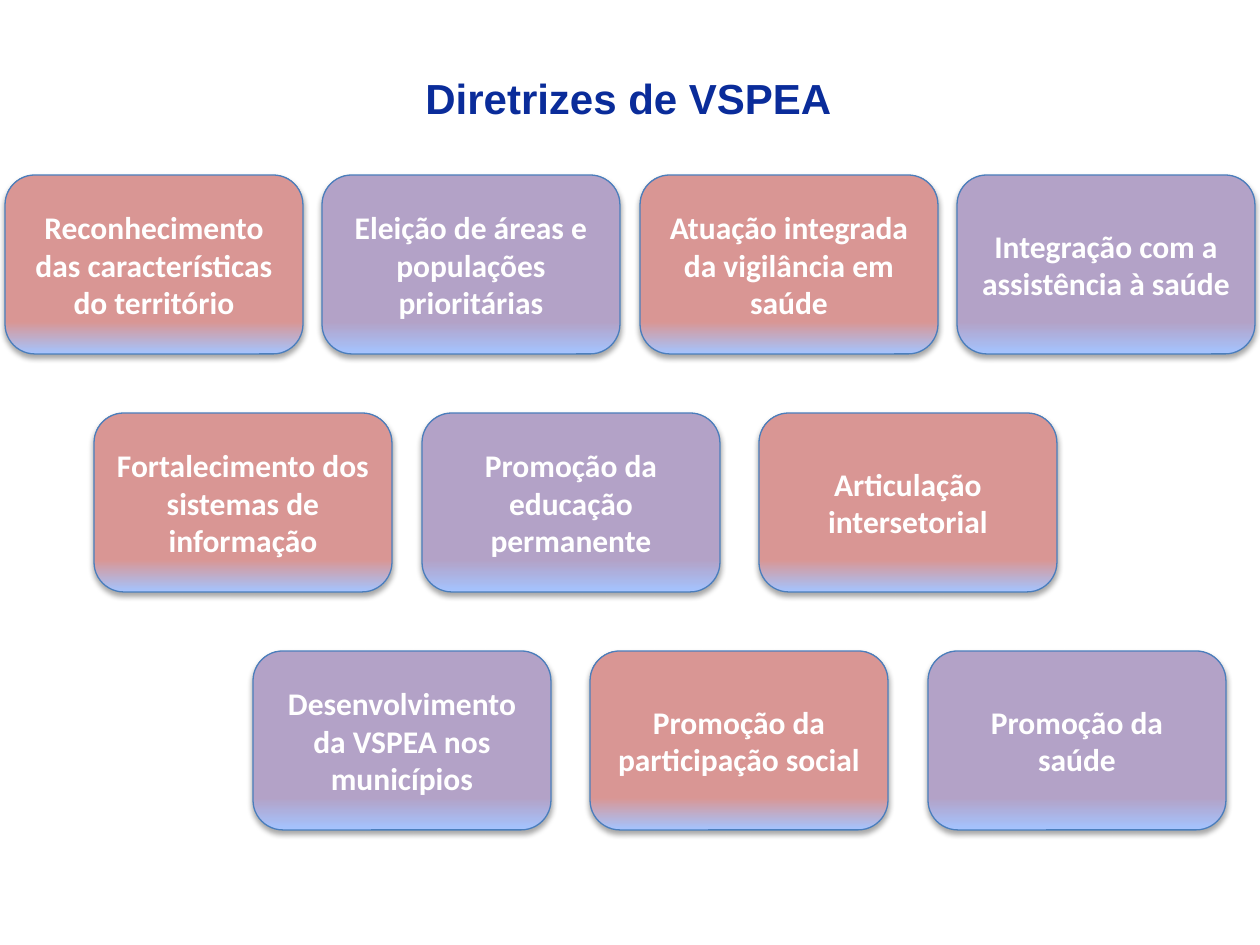
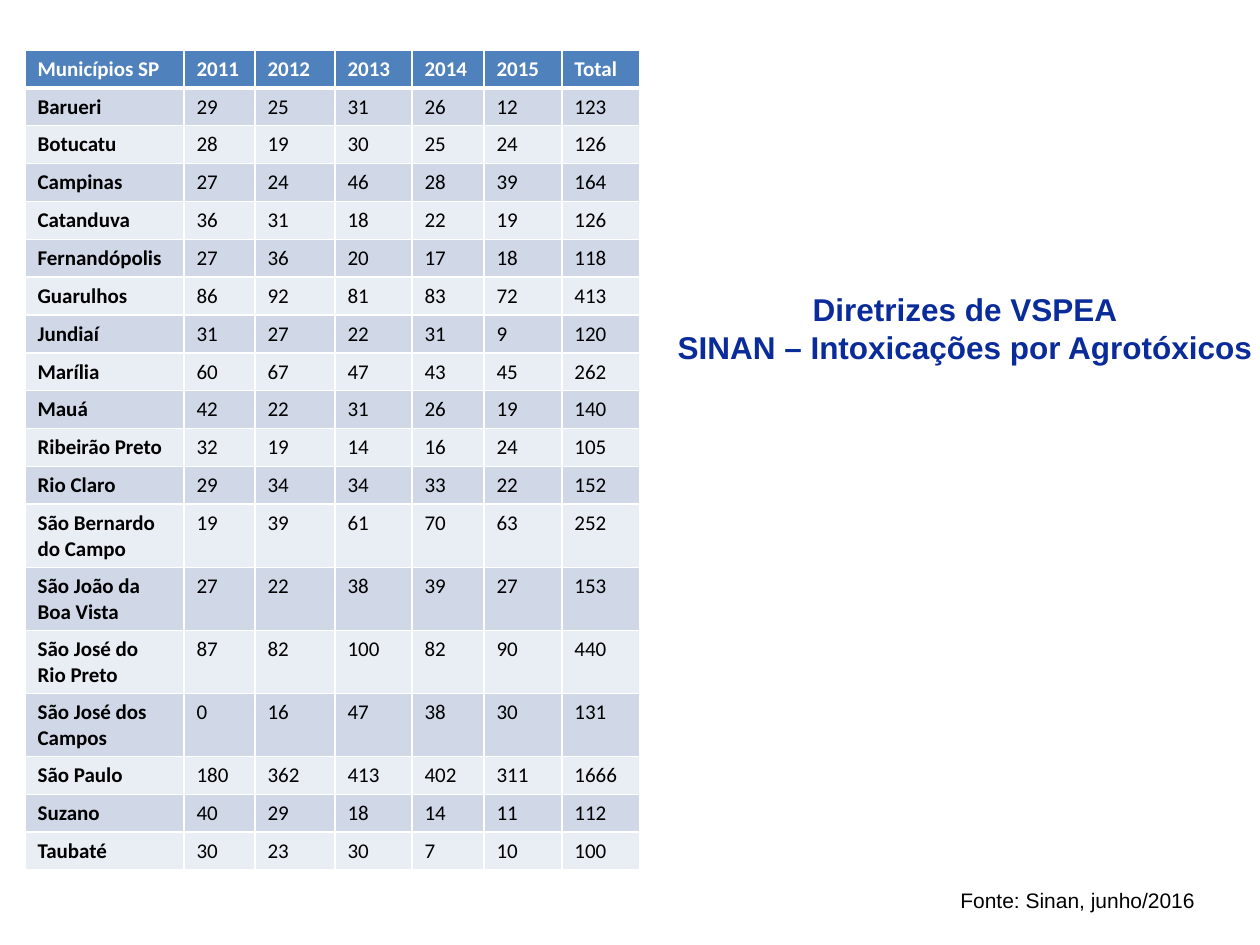
from dataclasses import dataclass

from lxml import etree
from pptx import Presentation
from pptx.dml.color import RGBColor
from pptx.enum.shapes import MSO_SHAPE as SHAPE
from pptx.enum.text import MSO_ANCHOR as ANCHOR, PP_ALIGN as ALIGN
from pptx.oxml.ns import qn
from pptx.util import Pt

# ---- Content ----
TITLE = "Diretrizes de VSPEA"
SUBTITLE = "SINAN – Intoxicações por Agrotóxicos"
SOURCE = "Fonte: Sinan, junho/2016"

# Each row of guidelines: (left edge, text) per card
GUIDELINE_ROWS = [
    [(5, "Reconhecimento das características do território"),
     (322, "Eleição de áreas e populações prioritárias"),
     (640, "Atuação integrada da vigilância em saúde"),
     (957, "Integração com a assistência à saúde")],
    [(94, "Fortalecimento dos sistemas de informação"),
     (422, "Promoção da educação permanente"),
     (759, "Articulação intersetorial")],
    [(253, "Desenvolvimento da VSPEA nos municípios"),
     (590, "Promoção da participação social"),
     (928, "Promoção da saúde")],
]

CASES = [
    ("Municípios SP", 2011, 2012, 2013, 2014, 2015, "Total"),
    ("Barueri", 29, 25, 31, 26, 12, 123),
    ("Botucatu", 28, 19, 30, 25, 24, 126),
    ("Campinas", 27, 24, 46, 28, 39, 164),
    ("Catanduva", 36, 31, 18, 22, 19, 126),
    ("Fernandópolis", 27, 36, 20, 17, 18, 118),
    ("Guarulhos", 86, 92, 81, 83, 72, 413),
    ("Jundiaí", 31, 27, 22, 31, 9, 120),
    ("Marília", 60, 67, 47, 43, 45, 262),
    ("Mauá", 42, 22, 31, 26, 19, 140),
    ("Ribeirão Preto", 32, 19, 14, 16, 24, 105),
    ("Rio Claro", 29, 34, 34, 33, 22, 152),
    ("São Bernardo do Campo", 19, 39, 61, 70, 63, 252),
    ("São João da Boa Vista", 27, 22, 38, 39, 27, 153),
    ("São José do Rio Preto", 87, 82, 100, 82, 90, 440),
    ("São José dos Campos", 0, 16, 47, 38, 30, 131),
    ("São Paulo", 180, 362, 413, 402, 311, 1666),
    ("Suzano", 40, 29, 18, 14, 11, 112),
    ("Taubaté", 30, 23, 30, 7, 10, 100),
]


# ---- Theme and measures (px) ----
@dataclass(frozen=True)
class Theme:
    heading_font: str = "Arial"
    body_font: str = "Calibri"
    title: str = "0A2C9A"
    text: str = "000000"
    white: str = "FFFFFF"
    cards: tuple = ("D99694", "B3A2C7")
    card_glow: str = "A4C4FF"
    card_line: str = "4B7EBC"
    header: str = "4F81BD"
    bands: tuple = ("E9EDF4", "D0D8E8")
    title_size: int = 24
    card_size: int = 18
    small_size: int = 12


T = Theme()
SLIDE_W, SLIDE_H = 1260, 945
CARD_W, CARD_H, CARD_TOP, CARD_PITCH = 298, 179, 175, 238
TABLE_LEFT, TABLE_TOP = 25, 50
COL_WIDTHS = [159, 71, 80, 77, 72, 78, 78]
ROW_H, TALL_ROW_H, LONG_NAME = 33, 54, 15


def px(n):
    return round(n * 914400 / 126)


def rgb(color):
    return RGBColor.from_string(color)


def add_run(p, text, font, size, color, bold=False):
    r = p.add_run()
    r.text = str(text)
    r.font.name, r.font.size, r.font.bold = font, Pt(size), bold
    r.font.color.rgb = rgb(color)


def add_text(slide, box, lines, size, color, bold=False, align=ALIGN.LEFT, wrap=True):
    tf = slide.shapes.add_textbox(*map(px, box)).text_frame
    tf.word_wrap = wrap
    for i, line in enumerate(lines):
        p = tf.add_paragraph() if i else tf.paragraphs[0]
        p.alignment = align
        add_run(p, line, T.heading_font, size, color, bold)


def add_title(slide, box, lines, size):
    add_text(slide, box, lines, size, T.title, True, ALIGN.CENTER)


# ---- Guideline cards ----
def add_shadow(sp):
    sp.shadow.inherit = False
    effects = sp._element.spPr.find(qn("a:effectLst"))
    shadow = etree.SubElement(effects, qn("a:outerShdw"), blurRad=str(Pt(3.1)),
                              dist=str(Pt(1.8)), dir="5400000", rotWithShape="0")
    black = etree.SubElement(shadow, qn("a:srgbClr"), val=T.text)
    etree.SubElement(black, qn("a:alpha"), val="35000")


def add_card(slide, left, top, text, color):
    sp = slide.shapes.add_shape(SHAPE.ROUNDED_RECTANGLE, *map(px, (left, top, CARD_W, CARD_H)))
    sp.fill.gradient()
    sp.fill.gradient_angle = 90
    for stop, shade, position in zip(sp.fill.gradient_stops, (T.card_glow, color), (0, 0.18)):
        stop.color.rgb = rgb(shade)
        stop.position = position
    sp.line.color.rgb = rgb(T.card_line)
    sp.line.width = Pt(0.75)
    add_shadow(sp)
    tf = sp.text_frame
    tf.word_wrap = True
    tf.vertical_anchor = ANCHOR.MIDDLE
    p = tf.paragraphs[0]
    p.alignment = ALIGN.CENTER
    add_run(p, text, T.body_font, T.card_size, T.white, True)


def build_guidelines(slide):
    add_title(slide, (43, 66, 1171, 118), [TITLE], T.title_size)
    count = 0
    for i, row in enumerate(GUIDELINE_ROWS):
        for left, text in row:
            add_card(slide, left, CARD_TOP + i * CARD_PITCH, text, T.cards[count % 2])
            count += 1


# ---- Cases table ----
def set_borders(cell, **widths):
    tcPr = cell._tc.get_or_add_tcPr()
    for side in "LRTB":
        ln = etree.SubElement(tcPr, qn(f"a:ln{side}"), w=str(Pt(widths.get(side, 1))))
        fill = etree.SubElement(ln, qn("a:solidFill"))
        etree.SubElement(fill, qn("a:srgbClr"), val=T.white)


def add_cases_table(slide):
    heights = [TALL_ROW_H if len(row[0]) > LONG_NAME else ROW_H for row in CASES]
    box = (TABLE_LEFT, TABLE_TOP, sum(COL_WIDTHS), sum(heights))
    table = slide.shapes.add_table(len(CASES), len(COL_WIDTHS), *map(px, box)).table
    for column, width in zip(table.columns, COL_WIDTHS):
        column.width = px(width)
    for i, (row, height) in enumerate(zip(CASES, heights)):
        table.rows[i].height = px(height)
        header = i == 0
        edges = {0: {"B": 3}, 1: {"T": 3}}.get(i, {})
        for j, value in enumerate(row):
            cell = table.cell(i, j)
            set_borders(cell, **edges)
            cell.fill.solid()
            cell.fill.fore_color.rgb = rgb(T.header if header else T.bands[i % 2])
            add_run(cell.text_frame.paragraphs[0], value, T.body_font, T.small_size,
                    T.white if header else T.text, header or j == 0)


def build_cases(slide):
    add_title(slide, (650, 284, 630, 118), [TITLE, SUBTITLE], T.card_size)
    add_text(slide, (948, 881, 262, 38), [SOURCE], T.small_size, T.text, wrap=False)
    add_cases_table(slide)


def main():
    prs = Presentation()
    prs.slide_width, prs.slide_height = px(SLIDE_W), px(SLIDE_H)
    for build in (build_guidelines, build_cases):
        build(prs.slides.add_slide(prs.slide_layouts[6]))
    prs.save("out.pptx")


if __name__ == "__main__":
    main()
